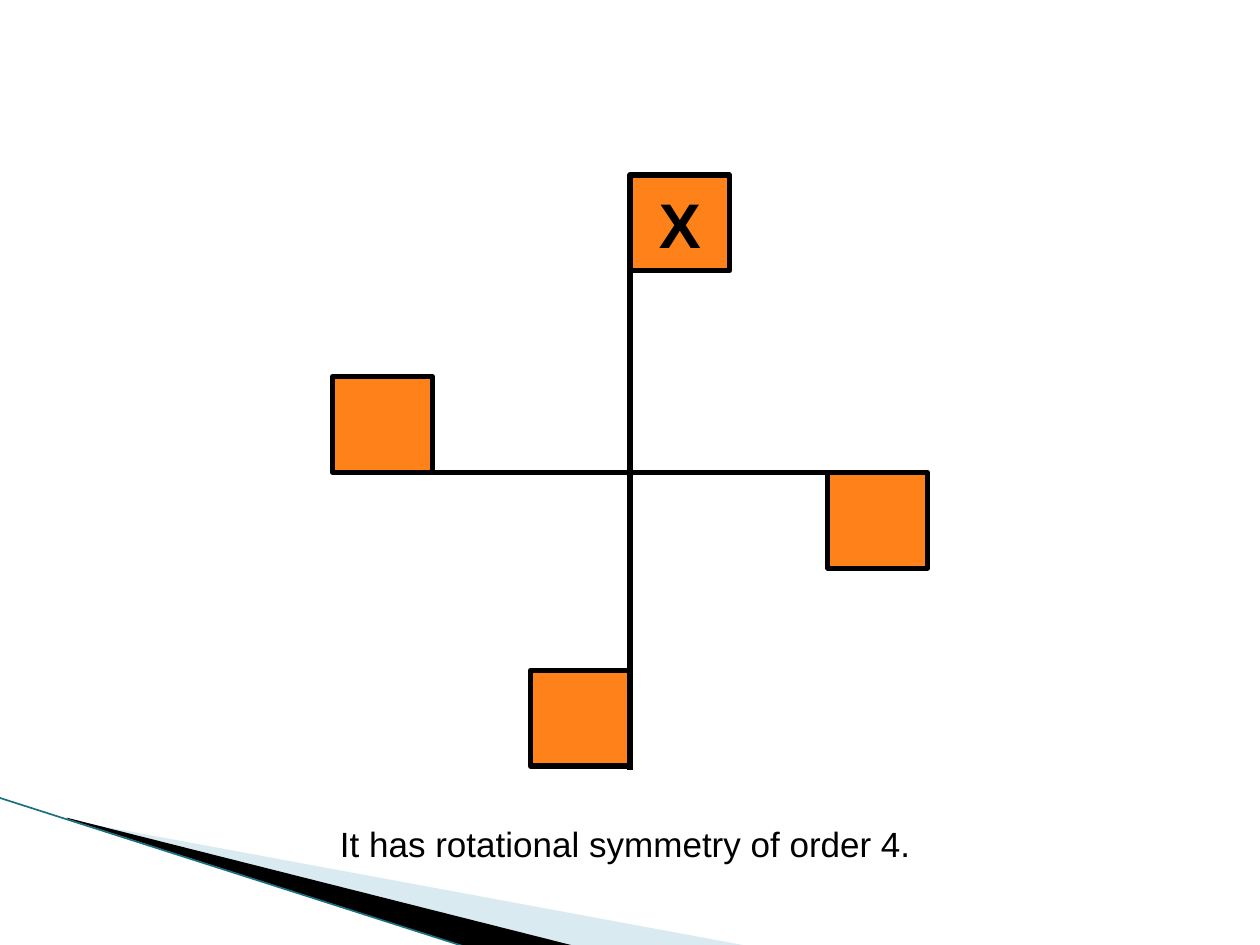
import pptx
import pptx.dml.color
import pptx.enum.shapes
import pptx.enum.text
import pptx.oxml
import pptx.oxml.ns
import pptx.util
from pptx.util import Inches


def rgb(value):
    return pptx.dml.color.RGBColor.from_string(value)


def add_line(x1, y1, x2, y2, color, width):
    line = s.shapes.add_connector(
        pptx.enum.shapes.MSO_CONNECTOR.STRAIGHT,
        Inches(x1), Inches(y1), Inches(x2), Inches(y2))
    line.line.color.rgb = rgb(color)
    line.line.width = pptx.util.Pt(width)
    pptx.oxml.ns.qn("a:effectLst")
    line._element.spPr.append(pptx.oxml.parse_xml(
        f'<a:effectLst {pptx.oxml.ns.nsdecls("a")}/>'))


prs = pptx.Presentation()
prs.slide_width, prs.slide_height = Inches(10), Inches(7.5)
s = prs.slides.add_slide(prs.slide_layouts[6])

# Corner wedges: points, colour, opacity in percent
wedges = [
    ([(0.55, 6.51), (5.95, 7.51), (4.56, 7.51), (0.55, 6.5)], "A0CBDC", 40),
    ([(0.53, 6.49), (4.57, 7.51), (3.72, 7.52), (0.54, 6.5)], "000000", 100),
]
for points, color, opacity in wedges:
    corners = [(Inches(x), Inches(y)) for x, y in points]
    builder = s.shapes.build_freeform(*corners[0])
    builder.add_line_segments(corners[1:], close=True)
    sp = builder.convert_to_shape()
    sp.shadow.inherit = False
    sp.fill.solid()
    sp.fill.fore_color.rgb = rgb(color)
    sp.line.fill.background()
    if opacity < 100:
        clr = sp._element.spPr.find(".//" + pptx.oxml.ns.qn("a:srgbClr"))
        clr.append(pptx.oxml.parse_xml(
            f'<a:alpha {pptx.oxml.ns.nsdecls("a")} val="{opacity * 1000}"/>'))
add_line(-0.01, 6.33, 3.71, 7.52, "1B6F82", 0.95)

# Cross with a flag at the end of each arm
cx, cy, arm = 5, 3.75, 2.36
flag_w, flag_h = 0.79, 0.76
add_line(cx, cy - arm, cx, cy + arm, "000000", 3)
add_line(cx - arm, cy, cx + arm, cy, "000000", 3)

flags = [
    (cx - arm, cy - flag_h, ""),
    (cx - flag_w, 5.32, ""),
    (cx + arm - flag_w, cy, ""),
    (cx, cy - arm, "X"),
]
for x, y, label in flags:
    sp = s.shapes.add_shape(
        pptx.enum.shapes.MSO_SHAPE.RECTANGLE,
        Inches(x), Inches(y), Inches(flag_w), Inches(flag_h))
    sp.shadow.inherit = False
    sp.fill.solid()
    sp.fill.fore_color.rgb = rgb("FF8119")
    sp.line.color.rgb = rgb("000000")
    sp.line.width = pptx.util.Pt(3)
    if label:
        tf = sp.text_frame
        tf.word_wrap = False
        tf.vertical_anchor = pptx.enum.text.MSO_ANCHOR.MIDDLE
        p = tf.paragraphs[0]
        p.text = label
        p.alignment = pptx.enum.text.PP_ALIGN.CENTER
        p.font.name = "Arial"
        p.font.size = pptx.util.Pt(36)
        p.font.bold = True
        p.font.color.rgb = rgb("000000")

caption = s.shapes.add_textbox(Inches(2.6), Inches(6.48), Inches(4.77), Inches(0.44))
tf = caption.text_frame
tf.word_wrap = False
tf.auto_size = pptx.enum.text.MSO_AUTO_SIZE.SHAPE_TO_FIT_TEXT
p = tf.paragraphs[0]
p.text = "It has rotational symmetry of order 4."
p.font.name = "Arial"
p.font.size = pptx.util.Pt(20)
p.font.color.rgb = rgb("000000")

prs.save("out.pptx")
